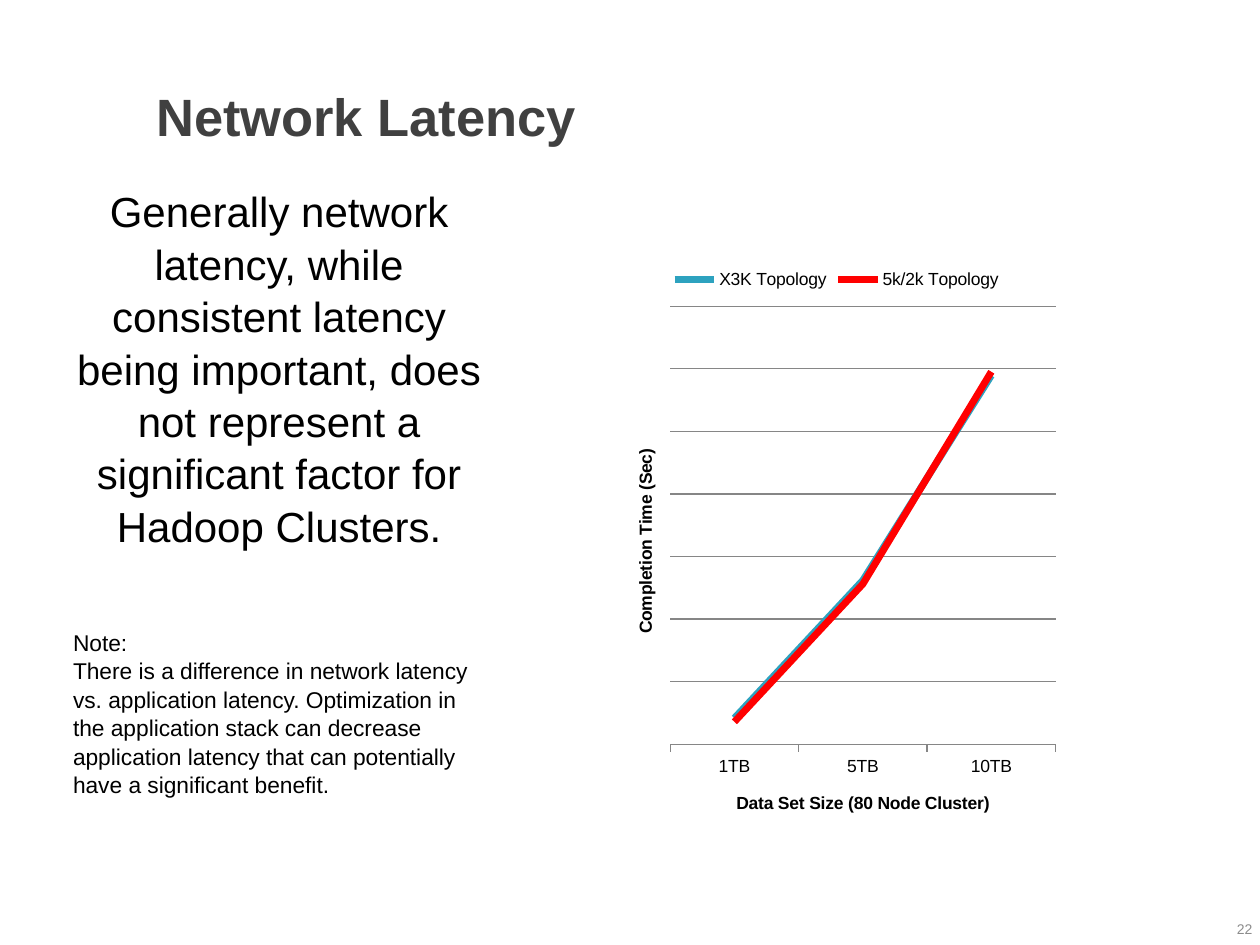
from typing import NamedTuple

from pptx import Presentation
from pptx.chart.data import CategoryChartData
from pptx.dml.color import RGBColor
from pptx.enum.chart import XL_CHART_TYPE, XL_LEGEND_POSITION, XL_TICK_MARK
from pptx.enum.text import MSO_ANCHOR, PP_ALIGN
from pptx.util import Inches, Pt

FONT = "Arial"
COLORS = {
    "title": "404040",
    "text": "000000",
    "page": "8C8C8C",
    "grid": "868686",
    "teal": "2DA2BF",
    "red": "FF0000",
}


class Box(NamedTuple):
    left: float
    top: float
    width: float
    height: float


class Para(NamedTuple):
    text: str
    size: float
    color: str = "text"
    align: PP_ALIGN = PP_ALIGN.LEFT
    bold: bool = False
    before: float = 0
    line: float = 1.0


class Series(NamedTuple):
    name: str
    values: tuple
    color: str


BODY = [
    Para("Generally network latency, while consistent latency being important, "
         "does not represent a significant factor for Hadoop Clusters.",
         24, align=PP_ALIGN.CENTER, line=1.04),
    Para("Note:", 13, before=44, line=1.04),
    Para("There is a difference in network latency vs. application latency. "
         "Optimization in the application stack can decrease application latency "
         "that can potentially have a significant benefit.", 13, line=1.04),
]
SERIES = [
    Series("X3K Topology", (7, 44, 99), "teal"),
    Series("5k/2k Topology", (6, 43, 100), "red"),
]


def rgb(name: str) -> RGBColor:
    return RGBColor.from_string(COLORS[name])


def style(font, size: float, color: str, bold: bool = False) -> None:
    font.name, font.size, font.bold = FONT, Pt(size), bold
    font.color.rgb = rgb(color)


def fill_text(shape, paras: list[Para], inset: tuple, anchor: MSO_ANCHOR) -> None:
    frame = shape.text_frame
    frame.word_wrap = True
    frame.vertical_anchor = anchor
    frame.margin_left = frame.margin_right = Inches(inset[0])
    frame.margin_top = frame.margin_bottom = Inches(inset[1])
    for i, item in enumerate(paras):
        para = frame.add_paragraph() if i else frame.paragraphs[0]
        para.text = item.text
        para.alignment = item.align
        para.line_spacing = item.line
        para.space_before = Pt(item.before)
        style(para.font, item.size, item.color, item.bold)


def add_text(slide, box: Box, paras: list[Para], inset: tuple,
             anchor: MSO_ANCHOR = MSO_ANCHOR.TOP) -> None:
    shape = slide.shapes.add_textbox(*map(Inches, box))
    fill_text(shape, paras, inset, anchor)


def name_axis(axis, text: str) -> None:
    frame = axis.axis_title.text_frame
    frame.text = text
    style(frame.paragraphs[0].font, 10, "text", True)


def draw_line(line, color: str, width: float) -> None:
    line.color.rgb = rgb(color)
    line.width = Pt(width)


def add_graph(slide, box: Box) -> None:
    data = CategoryChartData()
    data.categories = ["1TB", "5TB", "10TB"]
    for item in SERIES:
        data.add_series(item.name, item.values)
    chart = slide.shapes.add_chart(
        XL_CHART_TYPE.LINE, *map(Inches, box), data).chart
    style(chart.font, 10, "text")
    chart.has_title = False
    chart.has_legend = True
    chart.legend.position = XL_LEGEND_POSITION.TOP
    chart.legend.include_in_layout = False

    # Lines
    plot = chart.plots[0]
    plot.vary_by_categories = False
    for line, item in zip(plot.series, SERIES):
        line.smooth = False
        draw_line(line.format.line, item.color, 4)

    # Axes
    sizes, times = chart.category_axis, chart.value_axis
    name_axis(sizes, "Data Set Size (80 Node Cluster)")
    name_axis(times, "Completion Time (Sec)")
    sizes.major_tick_mark = XL_TICK_MARK.OUTSIDE
    draw_line(sizes.format.line, "grid", 0.75)
    times.visible = False
    times.minimum_scale, times.maximum_scale = 0, 117.6
    times.major_unit = 16.8
    times.has_major_gridlines = True
    draw_line(times.major_gridlines.format.line, "grid", 0.75)


def main() -> None:
    deck = Presentation()
    deck.slide_width, deck.slide_height = Inches(10), Inches(7.5)
    slide = deck.slides.add_slide(deck.slide_layouts[5])

    # Title
    title = slide.shapes.title
    title.left, title.top, title.width, title.height = map(
        Inches, Box(1.15, 0.3, 6.68, 0.92))
    fill_text(title, [Para("Network Latency", 30, "title", bold=True, line=0.9)],
              (0.09, 0.05), MSO_ANCHOR.BOTTOM)

    # Message and note
    add_text(slide, Box(0.5, 1.42, 3.43, 4.85), BODY, (0.08, 0.04))

    # Completion times
    add_graph(slide, Box(4.83, 2.03, 3.62, 4.63))

    # Page number
    add_text(slide, Box(9.69, 7.17, 0.31, 0.4),
             [Para("22", 8, "page", PP_ALIGN.RIGHT)], (0.06, 0.03),
             MSO_ANCHOR.MIDDLE)

    deck.save("out.pptx")


if __name__ == "__main__":
    main()
